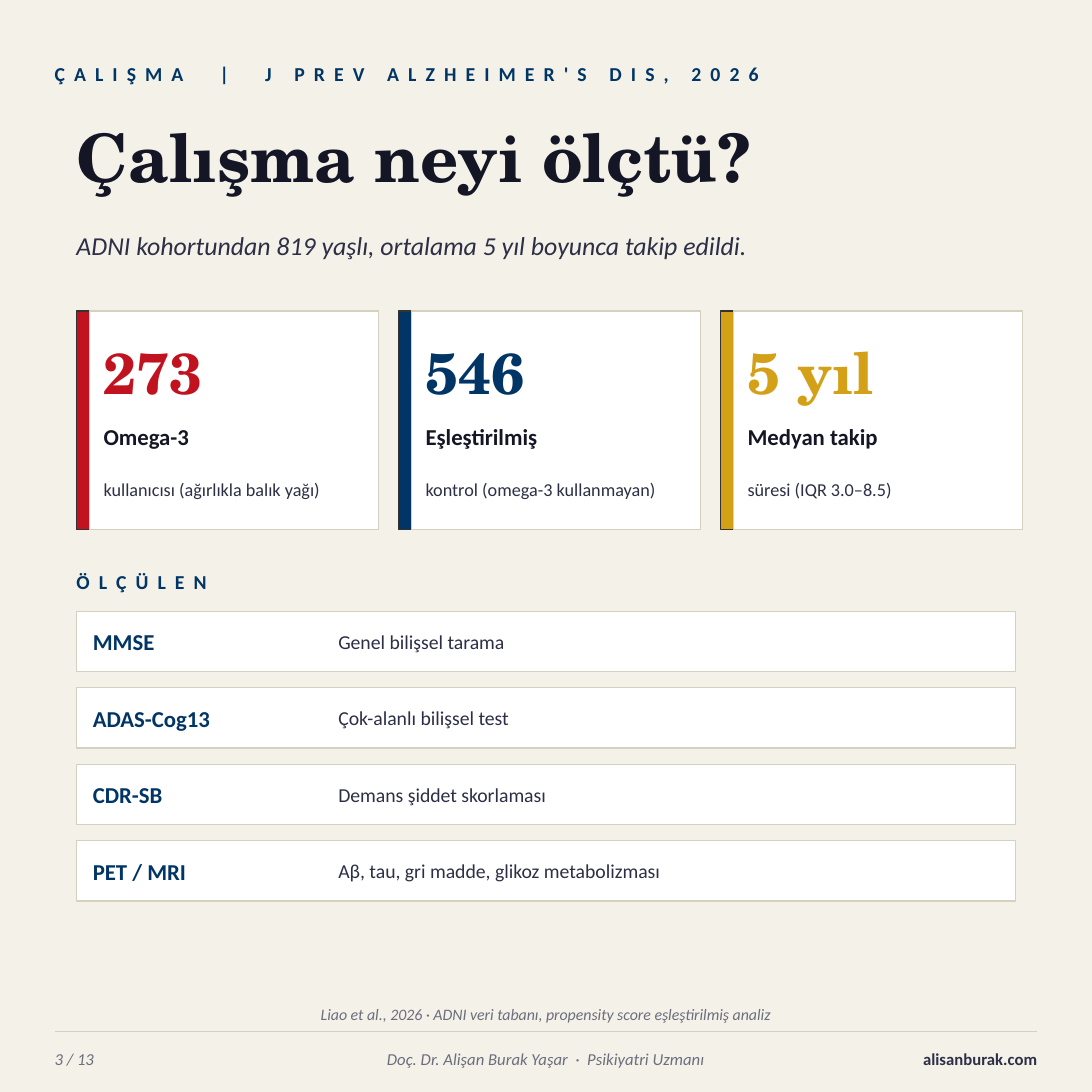
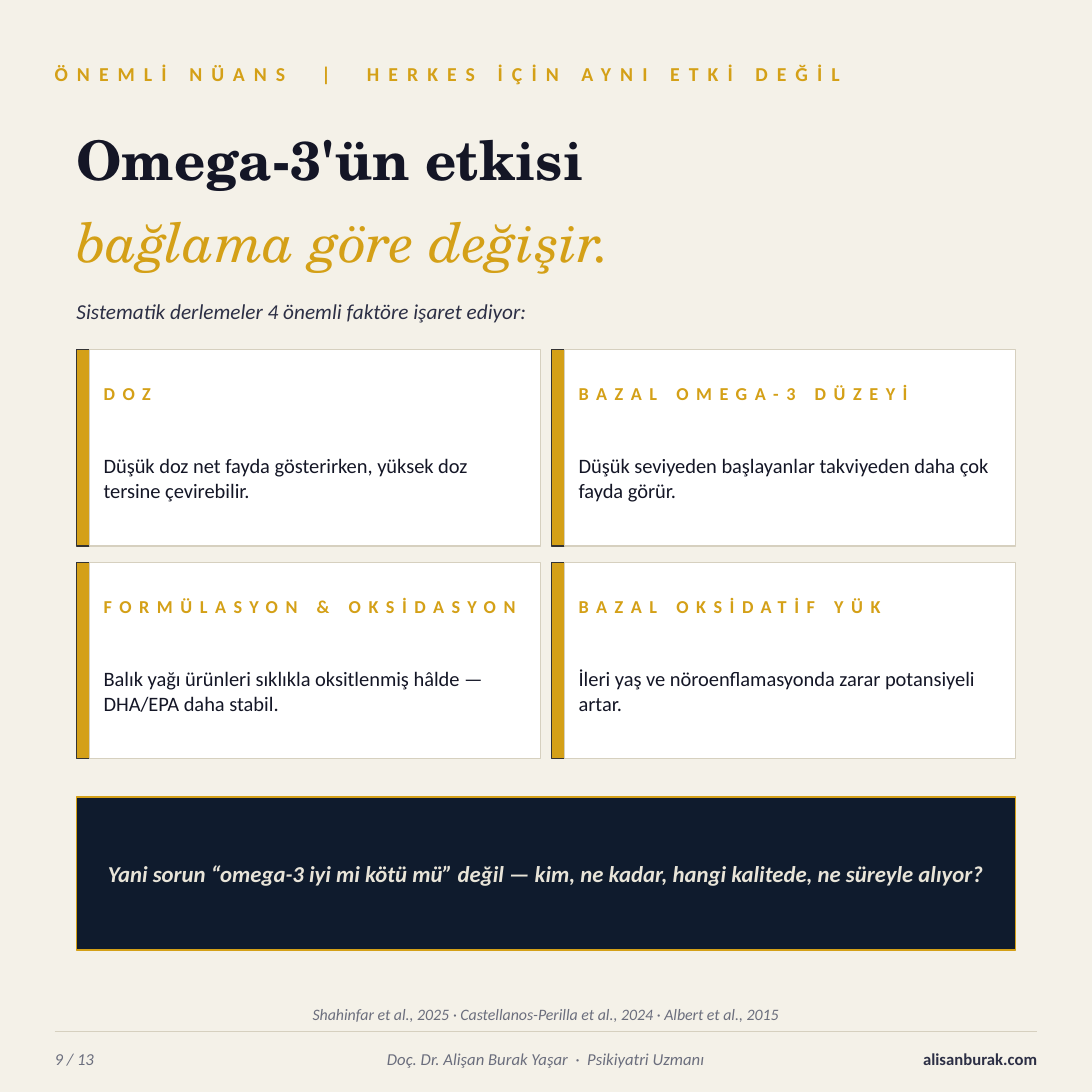
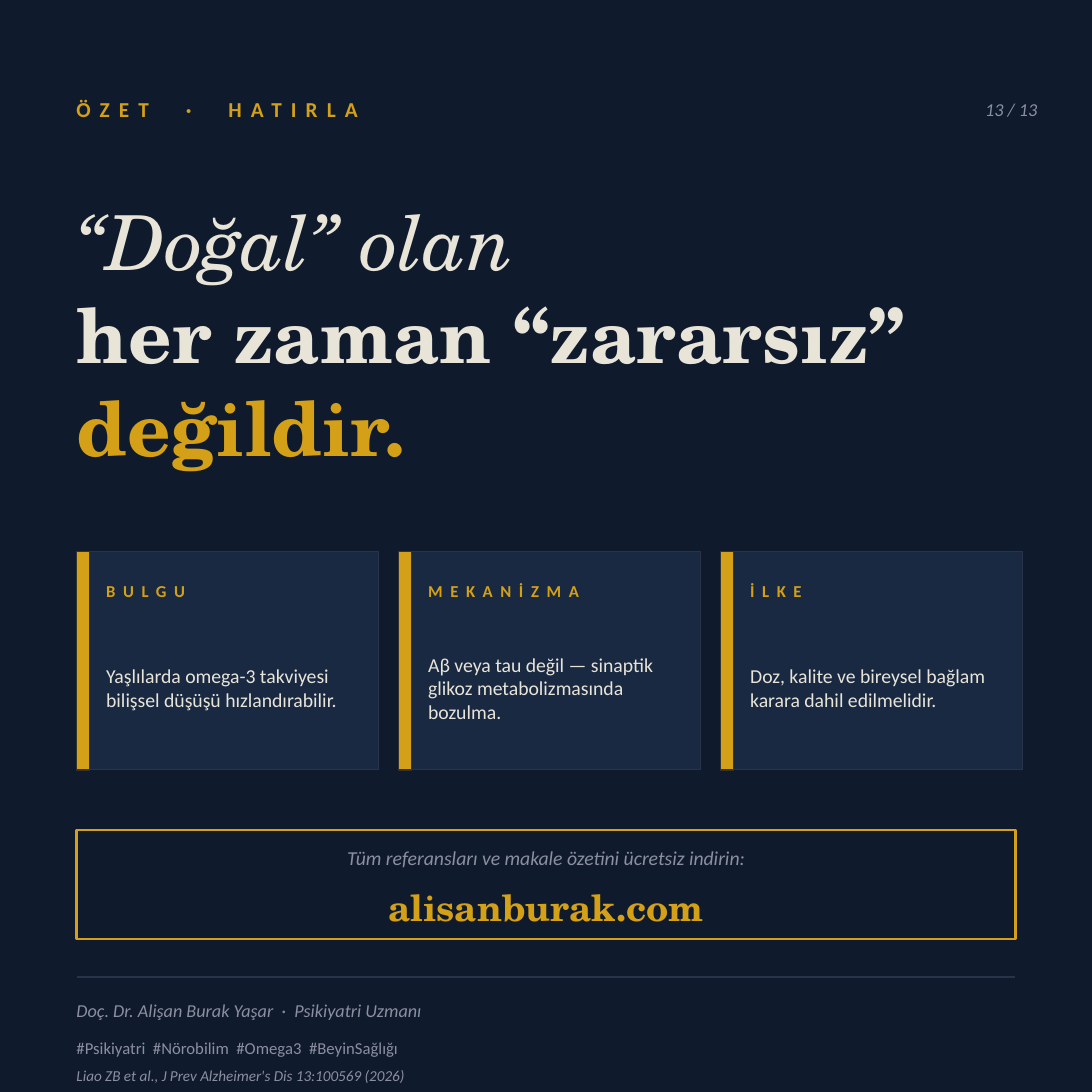
from pptx import Presentation
from pptx import util as u
from pptx.dml.color import RGBColor
from pptx.enum import shapes, text
from pptx.oxml import parse_xml
from pptx.oxml.ns import nsdecls

Cm, Pt = u.Cm, u.Pt

# Colours
PAPER = RGBColor(0xF4, 0xF1, 0xE8)
NIGHT = RGBColor(0x0F, 0x1B, 0x2D)
PANEL = RGBColor(0x1A, 0x29, 0x42)
SEAM = RGBColor(0x2A, 0x33, 0x49)
INK = RGBColor(0x14, 0x16, 0x26)
SLATE = RGBColor(0x2C, 0x2F, 0x45)
GREY = RGBColor(0x6B, 0x6E, 0x7D)
MIST = RGBColor(0x8B, 0x8F, 0xA0)
CREAM = RGBColor(0xE8, 0xE4, 0xD8)
SAND = RGBColor(0xD6, 0xD0, 0xBF)
WHITE = RGBColor(0xFF, 0xFF, 0xFF)
EDGE = RGBColor(0x33, 0x33, 0x33)
GOLD = RGBColor(0xD4, 0xA0, 0x17)
BLUE = RGBColor(0x00, 0x35, 0x66)
RED = RGBColor(0xC1, 0x12, 0x1F)

# Fonts, alignment and shared places (cm)
SANS, SERIF = "Calibri", "TeX Gyre Schola"
LEFT, MID, RIGHT = text.PP_ALIGN.LEFT, text.PP_ALIGN.CENTER, text.PP_ALIGN.RIGHT
EDGE_X, FULL = 1.27, 22.86
BODY_X, WIDE = 1.78, 21.84
BAR = 0.3
STEP, CARD_W, CARD_H, TEXT_W = 7.49, 6.73, 5.08, 6.22
AUTHOR = "Doç. Dr. Alişan Burak Yaşar  ·  Psikiyatri Uzmanı"
SITE = "alisanburak.com"


def put(slide, place, lines, size, color, align=LEFT, gap=0, pitch=None,
        title=False, **look):
    """Write text in a box, or in the title; a line may carry its own look."""
    if title:
        shape = slide.shapes.title
        shape.left, shape.top, shape.width, shape.height = map(Cm, place)
    else:
        shape = slide.shapes.add_textbox(*map(Cm, place))
    frame = shape.text_frame
    frame.word_wrap = True
    frame.auto_size = text.MSO_AUTO_SIZE.NONE
    frame.vertical_anchor = text.MSO_ANCHOR.MIDDLE
    for side in ("left", "top", "right", "bottom"):
        setattr(frame, "margin_" + side, 0)
    if isinstance(lines, str):
        lines = [(lines, color, look)]
    for i, (words, tint, form) in enumerate(lines):
        para = frame.add_paragraph() if i else frame.paragraphs[0]
        para.alignment = align
        if pitch:
            para.line_spacing = Pt(pitch)
        run = para.add_run()
        run.text = words
        style = {"name": SANS, "size": Pt(size), "bold": False, "italic": False}
        style.update(form)
        for key, value in style.items():
            setattr(run.font, key, value)
        run.font.color.rgb = tint
        if gap:
            run.font._element.set("spc", str(gap * 100))


def box(slide, place, fill, line, weight=1):
    """Draw a plain rectangle."""
    shape = slide.shapes.add_shape(shapes.MSO_SHAPE.RECTANGLE, *map(Cm, place))
    shape.shadow.inherit = False
    shape.fill.solid()
    shape.fill.fore_color.rgb = fill
    shape.line.color.rgb = line
    shape.line.width = Pt(weight)


deck = Presentation()
deck.slide_width = deck.slide_height = Cm(25.4)
study, nuance, recap = [deck.slides.add_slide(deck.slide_layouts[5])
                        for _ in range(3)]
for slide, color in ((study, PAPER), (nuance, PAPER), (recap, NIGHT)):
    slide.background.fill.solid()
    slide.background.fill.fore_color.rgb = color

# Kicker, source and footer of the light slides
for slide, kicker, color, source, page in (
    (study, "ÇALIŞMA  |  J PREV ALZHEIMER'S DIS, 2026", BLUE,
     "Liao et al., 2026 · ADNI veri tabanı, propensity score eşleştirilmiş analiz",
     "3 / 13"),
    (nuance, "ÖNEMLİ NÜANS  |  HERKES İÇİN AYNI ETKİ DEĞİL", GOLD,
     "Shahinfar et al., 2025 · Castellanos-Perilla et al., 2024 · Albert et al., 2015",
     "9 / 13"),
):
    put(slide, (EDGE_X, 1.27, FULL, 0.89), kicker, 13, color, gap=6, bold=True)
    put(slide, (EDGE_X, 23.24, FULL, 0.71), source, 10.5, GREY, MID, italic=True)
    put(slide, (EDGE_X, 24.26, 3.81, 0.76), page, 11, GREY, italic=True)
    put(slide, (5.08, 24.26, 15.24, 0.76), AUTHOR, 11, GREY, MID, italic=True)
    put(slide, (20.32, 24.26, 3.81, 0.76), SITE, 11, SLATE, RIGHT, bold=True)

# Rules above the footers
for slide, x, y, color, weight in (
    (study, EDGE_X, 24, SAND, 0.75),
    (nuance, EDGE_X, 24, SAND, 0.75),
    (recap, BODY_X, 22.73, SEAM, 1),
):
    rule = slide.shapes.add_connector(shapes.MSO_CONNECTOR.STRAIGHT,
                                      Cm(x), Cm(y), Cm(25.4 - x), Cm(y))
    rule.line.color.rgb = color
    rule.line.width = Pt(weight)
    rule._element.spPr.append(parse_xml("<a:effectLst %s/>" % nsdecls("a")))

# Study: title and lead
put(study, (BODY_X, 2.54, FULL, 2.16), "Çalışma neyi ölçtü?", 44, INK,
    title=True, name=SERIF, bold=True)
put(study, (BODY_X, 5.08, FULL, 1.27),
    "ADNI kohortundan 819 yaşlı, ortalama 5 yıl boyunca takip edildi.",
    17, SLATE, italic=True)

# Study: figure cards
for i, (figure, label, note, color) in enumerate((
    ("273", "Omega-3", "kullanıcısı (ağırlıkla balık yağı)", RED),
    ("546", "Eşleştirilmiş", "kontrol (omega-3 kullanmayan)", BLUE),
    ("5 yıl", "Medyan takip", "süresi (IQR 3.0–8.5)", GOLD),
)):
    x, y = BODY_X + i * STEP, 7.24
    box(study, (x, y, BAR, CARD_H), color, EDGE)
    box(study, (x + BAR, y, CARD_W, CARD_H), WHITE, SAND)
    x += 0.63
    put(study, (x, y + 0.51, TEXT_W, 1.78), figure, 38, color,
        name=SERIF, bold=True)
    put(study, (x, y + 2.41, TEXT_W, 1.02), label, 15, INK, bold=True)
    put(study, (x, y + 3.43, TEXT_W, 1.4), note, 12, SLATE)

# Study: measures
put(study, (BODY_X, 13.08, FULL, 0.89), "ÖLÇÜLEN", 13, BLUE, gap=6, bold=True)
for i, (test, note) in enumerate((
    ("MMSE", "Genel bilişsel tarama"),
    ("ADAS-Cog13", "Çok-alanlı bilişsel test"),
    ("CDR-SB", "Demans şiddet skorlaması"),
    ("PET / MRI", "Aβ, tau, gri madde, glikoz metabolizması"),
)):
    y = 14.22 + i * 1.78
    box(study, (BODY_X, y, WIDE, 1.4), WHITE, SAND, 0.75)
    put(study, (2.16, y, 5.59, 1.4), test, 15, BLUE, bold=True)
    put(study, (7.87, y, 15.24, 1.4), note, 13, SLATE)

# Nuance: title and lead
put(nuance, (BODY_X, 2.62, FULL, 3.68), [
    ("Omega-3'ün etkisi", INK, {"name": SERIF, "bold": True}),
    ("bağlama göre değişir.", GOLD, {"name": SERIF, "italic": True}),
], 36, INK, pitch=54, title=True)
put(nuance, (BODY_X, 6.73, FULL, 1.02),
    "Sistematik derlemeler 4 önemli faktöre işaret ediyor:",
    14, SLATE, italic=True)

# Nuance: factor cards, two by two
for i, (label, note) in enumerate((
    ("DOZ", "Düşük doz net fayda gösterirken, yüksek doz tersine çevirebilir."),
    ("BAZAL OMEGA-3 DÜZEYİ",
     "Düşük seviyeden başlayanlar takviyeden daha çok fayda görür."),
    ("FORMÜLASYON & OKSİDASYON",
     "Balık yağı ürünleri sıklıkla oksitlenmiş hâlde — DHA/EPA daha stabil."),
    ("BAZAL OKSİDATİF YÜK",
     "İleri yaş ve nöroenflamasyonda zarar potansiyeli artar."),
)):
    row, col = divmod(i, 2)
    x, y = BODY_X + col * 11.05, 8.13 + row * 4.95
    box(nuance, (x, y, BAR, 4.57), GOLD, EDGE)
    box(nuance, (x + BAR, y, 10.49, 4.57), WHITE, SAND)
    x += 0.63
    put(nuance, (x, y + 0.51, 9.78, 1.02), label, 12, GOLD, gap=5, bold=True)
    put(nuance, (x, y + 1.65, 9.78, 2.67), note, 13.5, INK)

# Nuance: closing banner
box(nuance, (BODY_X, 18.54, WIDE, 3.56), NIGHT, GOLD)
put(nuance, (2.16, 18.54, 21.08, 3.56),
    "Yani sorun “omega-3 iyi mi kötü mü” değil — kim, ne kadar, "
    "hangi kalitede, ne süreyle alıyor?",
    15, CREAM, MID, bold=True, italic=True)

# Recap: kicker, page and title
put(recap, (BODY_X, 2.03, FULL, 1.02), "ÖZET  ·  HATIRLA", 14, GOLD,
    gap=6, bold=True)
put(recap, (21.59, 2.03, 2.54, 1.02), "13 / 13", 12, MIST, RIGHT, italic=True)
put(recap, (BODY_X, 4.49, FULL, 6.48), [
    ("“Doğal” olan", CREAM, {"name": SERIF, "italic": True}),
    ("her zaman “zararsız”", CREAM, {"name": SERIF, "bold": True}),
    ("değildir.", GOLD, {"name": SERIF, "bold": True}),
], 50, CREAM, pitch=61.2, title=True)

# Recap: takeaway cards
for i, (label, note) in enumerate((
    ("BULGU", "Yaşlılarda omega-3 takviyesi bilişsel düşüşü hızlandırabilir."),
    ("MEKANİZMA",
     "Aβ veya tau değil — sinaptik glikoz metabolizmasında bozulma."),
    ("İLKE", "Doz, kalite ve bireysel bağlam karara dahil edilmelidir."),
)):
    x, y = BODY_X + i * STEP, 12.83
    box(recap, (x, y, BAR, CARD_H), GOLD, EDGE)
    box(recap, (x + BAR, y, CARD_W, CARD_H), PANEL, SEAM, 0.75)
    x += 0.69
    put(recap, (x, y + 0.46, TEXT_W, 0.89), label, 11, GOLD, gap=5, bold=True)
    put(recap, (x, y + 1.52, TEXT_W, 3.3), note, 13, CREAM)

# Recap: download box
box(recap, (BODY_X, 19.3, WIDE, 2.54), NIGHT, GOLD, 1.5)
put(recap, (2.16, 19.43, 21.08, 1.02),
    "Tüm referansları ve makale özetini ücretsiz indirin:",
    13, MIST, MID, italic=True)
put(recap, (2.16, 20.45, 21.08, 1.27), SITE, 24, GOLD, MID,
    name=SERIF, bold=True)

# Recap: credits
for y, high, words, size, slant in (
    (23.11, 0.76, AUTHOR, 12, True),
    (24, 0.76, "#Psikiyatri  #Nörobilim  #Omega3  #BeyinSağlığı", 11, False),
    (24.77, 0.51, "Liao ZB et al., J Prev Alzheimer's Dis 13:100569 (2026)", 10, True),
):
    put(recap, (BODY_X, y, WIDE, high), words, size, MIST, italic=slant)

deck.save("out.pptx")
